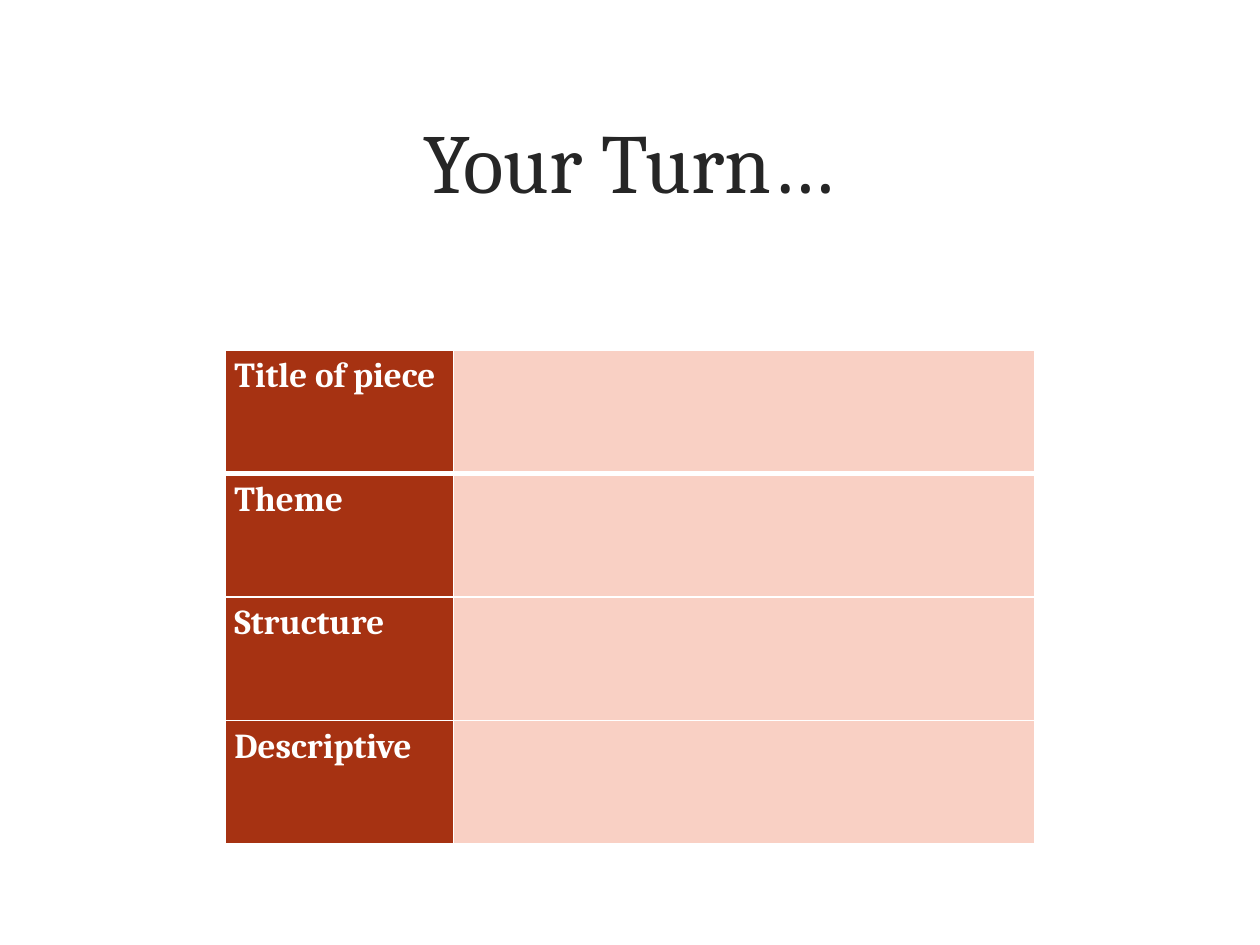
"""Build the "Your Turn…" slide with a worksheet table."""
import lxml.etree
import pptx
import pptx.dml.color
import pptx.enum.text
import pptx.oxml.ns
import pptx.util

Inches = pptx.util.Inches
Pt = pptx.util.Pt


def rgb(value):
    return pptx.dml.color.RGBColor.from_string(value)


class Deck:
    FONT = "Cambria"
    INK = "262626"
    WHITE = "FFFFFF"
    LABEL_FILL = "A63212"
    ANSWER_FILL = "F9D0C4"

    def __init__(self, prs):
        self.s = prs.slides.add_slide(prs.slide_layouts[5])

    def style(self, p, size, color, bold=False):
        for r in p.runs:
            r.font.name = self.FONT
            r.font.size = Pt(size)
            r.font.bold = bold
            r.font.color.rgb = rgb(color)

    def title(self, text, left, top, width, height):
        sp = self.s.shapes.title
        sp.left, sp.top = Inches(left), Inches(top)
        sp.width, sp.height = Inches(width), Inches(height)
        tf = sp.text_frame
        tf.text = text
        tf.vertical_anchor = pptx.enum.text.MSO_ANCHOR.MIDDLE
        p = tf.paragraphs[0]
        p.alignment = pptx.enum.text.PP_ALIGN.CENTER
        self.style(p, 48, self.INK)

    def border(self, cell, widths):
        qn = pptx.oxml.ns.qn
        tcPr = cell._tc.get_or_add_tcPr()
        for i, (side, width) in enumerate(widths.items()):
            ln = lxml.etree.Element(qn(f"a:ln{side}"), w=str(Pt(width)))
            fill = lxml.etree.SubElement(ln, qn("a:solidFill"))
            lxml.etree.SubElement(fill, qn("a:srgbClr"), val=self.WHITE)
            tcPr.insert(i, ln)

    def table(self, labels, left, top, col_widths, row_height):
        frame = self.s.shapes.add_table(
            len(labels), len(col_widths), Inches(left), Inches(top),
            Inches(sum(col_widths)), Inches(row_height * len(labels)))
        table = frame.table
        for column, width in zip(table.columns, col_widths):
            column.width = Inches(width)
        for i, label in enumerate(labels):
            table.rows[i].height = Inches(row_height)
            label_cell, answer_cell = table.rows[i].cells
            label_cell.margin_left = label_cell.margin_right = Inches(0.07)
            label_cell.margin_top = label_cell.margin_bottom = 0
            label_cell.text_frame.text = label
            p = label_cell.text_frame.paragraphs[0]
            p.line_spacing = 1.15
            self.style(p, 20, self.WHITE, bold=True)
            widths = {"L": 1, "R": 1, "T": 3 if i == 1 else 1, "B": 3 if i == 0 else 1}
            for cell, color in ((label_cell, self.LABEL_FILL), (answer_cell, self.ANSWER_FILL)):
                cell.fill.solid()
                cell.fill.fore_color.rgb = rgb(color)
                self.border(cell, widths)


def main():
    prs = pptx.Presentation()
    prs.slide_width, prs.slide_height = Inches(10), Inches(7.5)
    deck = Deck(prs)
    deck.title("Your Turn…", 0.6, 0.48, 8.79, 1.58)
    deck.table(["Title of piece", "Theme", "Structure", "Descriptive"],
               1.79, 2.78, (1.81, 4.61), 0.98)
    prs.save("out.pptx")


if __name__ == "__main__":
    main()
